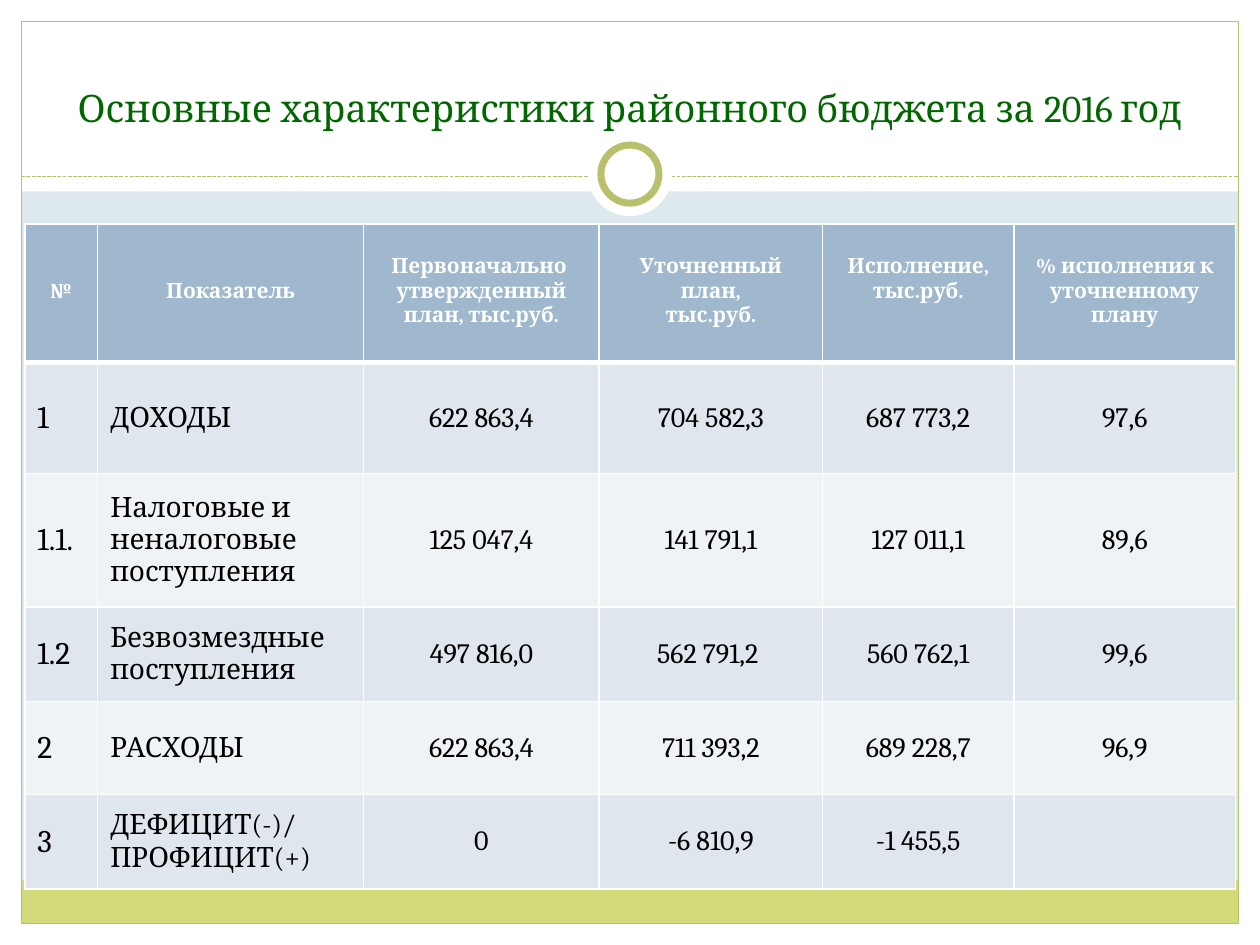
from dataclasses import dataclass

from lxml import etree
from pptx import Presentation
from pptx.dml.color import RGBColor
from pptx.enum.dml import MSO_LINE
from pptx.enum.shapes import MSO_CONNECTOR, MSO_SHAPE
from pptx.enum.text import MSO_ANCHOR, PP_ALIGN
from pptx.oxml.ns import qn
from pptx.util import Cm, Pt

RECT, OVAL = MSO_SHAPE.RECTANGLE, MSO_SHAPE.OVAL
STRAIGHT, DASH = MSO_CONNECTOR.STRAIGHT, MSO_LINE.SQUARE_DOT
LEFT, CENTER = PP_ALIGN.LEFT, PP_ALIGN.CENTER
TOP, MIDDLE, BOTTOM = MSO_ANCHOR.TOP, MSO_ANCHOR.MIDDLE, MSO_ANCHOR.BOTTOM


@dataclass(frozen=True)
class Theme:
    font: str = "Cambria"
    back: str = "DDE9EC"
    white: str = "FFFFFF"
    black: str = "000000"
    olive: str = "B9C06C"
    strip: str = "D2DA7A"
    title: str = "006600"
    header: str = "9FB8CD"
    bands: tuple = ("DFE6ED", "F0F3F6")
    title_size: float = 21.6
    header_size: float = 12
    number_size: float = 18
    body_size: float = 16


T = Theme()
SLIDE_W, SLIDE_H = 25.4, 19.05
MARGIN = 0.43

COL_WIDTHS = (1.47, 5.36, 4.75, 4.5, 3.86, 4.47)
ROW_HEIGHTS = (2.79, 2.24, 2.69, 1.9, 1.88, 1.9)
# Each header: top margin of the cell, then its paragraphs
HEADERS = (
    (1.12, "№"),
    (1.12, "Показатель"),
    (0.62, "Первоначально \nутвержденный\nплан, тыс.руб."),
    (0.62, "Уточненный\nплан,\nтыс.руб."),
    (0.62, "Исполнение, тыс.руб."),
    (0.62, "% исполнения к\nуточненному\nплану"),
)
ROWS = (
    ("1", "ДОХОДЫ", "622 863,4", "704 582,3", "687 773,2", "97,6"),
    ("1.1.", "Налоговые и неналоговые\nпоступления",
     "125 047,4", "141 791,1", "127 011,1", "89,6"),
    ("1.2", "Безвозмездные поступления",
     "497 816,0", "562 791,2 ", "560 762,1", "99,6"),
    ("2", "РАСХОДЫ", "622 863,4", "711 393,2", "689 228,7", "96,9"),
    ("3", "ДЕФИЦИТ(-)/\nПРОФИЦИТ(+)", "0", "-6 810,9", "-1 455,5", ""),
)


def rgb(color):
    return RGBColor.from_string(color)


def add_box(s, kind, x, y, w, h, fill=None, line=None, weight=0.75):
    sp = s.shapes.add_shape(kind, Cm(x), Cm(y), Cm(w), Cm(h))
    sp.shadow.inherit = False
    if fill:
        sp.fill.solid()
        sp.fill.fore_color.rgb = rgb(fill)
    else:
        sp.fill.background()
    if line:
        sp.line.color.rgb = rgb(line)
        sp.line.width = Pt(weight)
    else:
        sp.line.fill.background()


def write(tf, text, size, color, align, bold=False):
    for i, part in enumerate(text.split("\n")):
        p = tf.paragraphs[0] if i == 0 else tf.add_paragraph()
        p.alignment = align
        if part:
            r = p.add_run()
            r.text = part
            r.font.name, r.font.size, r.font.bold = T.font, Pt(size), bold
            r.font.color.rgb = rgb(color)


def set_borders(cell, top, bottom):
    tc_pr = cell._tc.get_or_add_tcPr()
    weights = (("lnL", 1), ("lnR", 1), ("lnT", top), ("lnB", bottom))
    for i, (tag, weight) in enumerate(weights):
        ln = etree.Element(qn(f"a:{tag}"), w=str(Pt(weight)))
        fill = etree.SubElement(ln, qn("a:solidFill"))
        etree.SubElement(fill, qn("a:srgbClr"), val=T.white)
        tc_pr.insert(i, ln)


def add_frame(s, w, h):
    # White margins around the page, with a taller band at the top
    inner_w = w - 2 * MARGIN
    for box in ((0, h - MARGIN, w, MARGIN), (0, 0, w, 3.86),
                (0, 0, MARGIN, h), (w - MARGIN, 0, MARGIN, h)):
        add_box(s, RECT, *box, fill=T.white)

    # Bottom strip and outline
    add_box(s, RECT, MARGIN, h - MARGIN - 0.87, inner_w, 0.87, fill=T.strip)
    add_box(s, RECT, MARGIN, MARGIN, inner_w, h - 2 * MARGIN, line=T.olive)

    # Dashed divider
    y = 3.56
    cx = s.shapes.add_connector(STRAIGHT, Cm(MARGIN), Cm(y), Cm(w - MARGIN), Cm(y))
    cx.line.color.rgb = rgb(T.olive)
    cx.line.width = Pt(0.75)
    cx.line.dash_style = DASH
    etree.SubElement(cx._element.spPr, qn("a:effectLst"))

    # Ring on the divider
    for d, line in ((1.7, None), (1.17, T.olive)):
        add_box(s, OVAL, (w - d) / 2, 3.51 - d / 2, d, d, T.white, line, 4)


def add_title(s, x, y, w, h):
    tf = s.shapes.add_textbox(Cm(x), Cm(y), Cm(w), Cm(h)).text_frame
    tf.word_wrap = True
    tf.vertical_anchor = BOTTOM
    write(tf, "Основные характеристики районного бюджета за 2016 год",
          T.title_size, T.title, CENTER)


def fill_cell(cell, color, anchor, top=1, bottom=1):
    cell.fill.solid()
    cell.fill.fore_color.rgb = rgb(color)
    cell.vertical_anchor = anchor
    set_borders(cell, top, bottom)


def add_budget_table(s, x, y):
    table = s.shapes.add_table(
        len(ROW_HEIGHTS), len(COL_WIDTHS), Cm(x), Cm(y),
        Cm(sum(COL_WIDTHS)), Cm(sum(ROW_HEIGHTS))).table
    table.horz_banding = False
    for col, width in zip(table.columns, COL_WIDTHS):
        col.width = Cm(width)
    for row, height in zip(table.rows, ROW_HEIGHTS):
        row.height = Cm(height)

    # Header row
    for c, (margin, text) in enumerate(HEADERS):
        cell = table.cell(0, c)
        fill_cell(cell, T.header, TOP, bottom=3)
        cell.margin_top = Cm(margin)
        write(cell.text_frame, text, T.header_size, T.white, CENTER, bold=True)

    # Body rows
    for r, values in enumerate(ROWS, start=1):
        for c, text in enumerate(values):
            cell = table.cell(r, c)
            fill_cell(cell, T.bands[(r - 1) % 2], MIDDLE, top=3 if r == 1 else 1)
            write(cell.text_frame, text,
                  T.number_size if c == 0 else T.body_size,
                  T.black, LEFT if c < 2 else CENTER)


def main():
    prs = Presentation()
    prs.slide_width, prs.slide_height = Cm(SLIDE_W), Cm(SLIDE_H)
    s = prs.slides.add_slide(prs.slide_layouts[6])
    s.background.fill.solid()
    s.background.fill.fore_color.rgb = rgb(T.back)
    add_frame(s, SLIDE_W, SLIDE_H)
    add_title(s, 0.85, 0.64, 23.7, 2.1)
    add_budget_table(s, 0.5, 4.52)
    prs.save("out.pptx")


if __name__ == "__main__":
    main()
